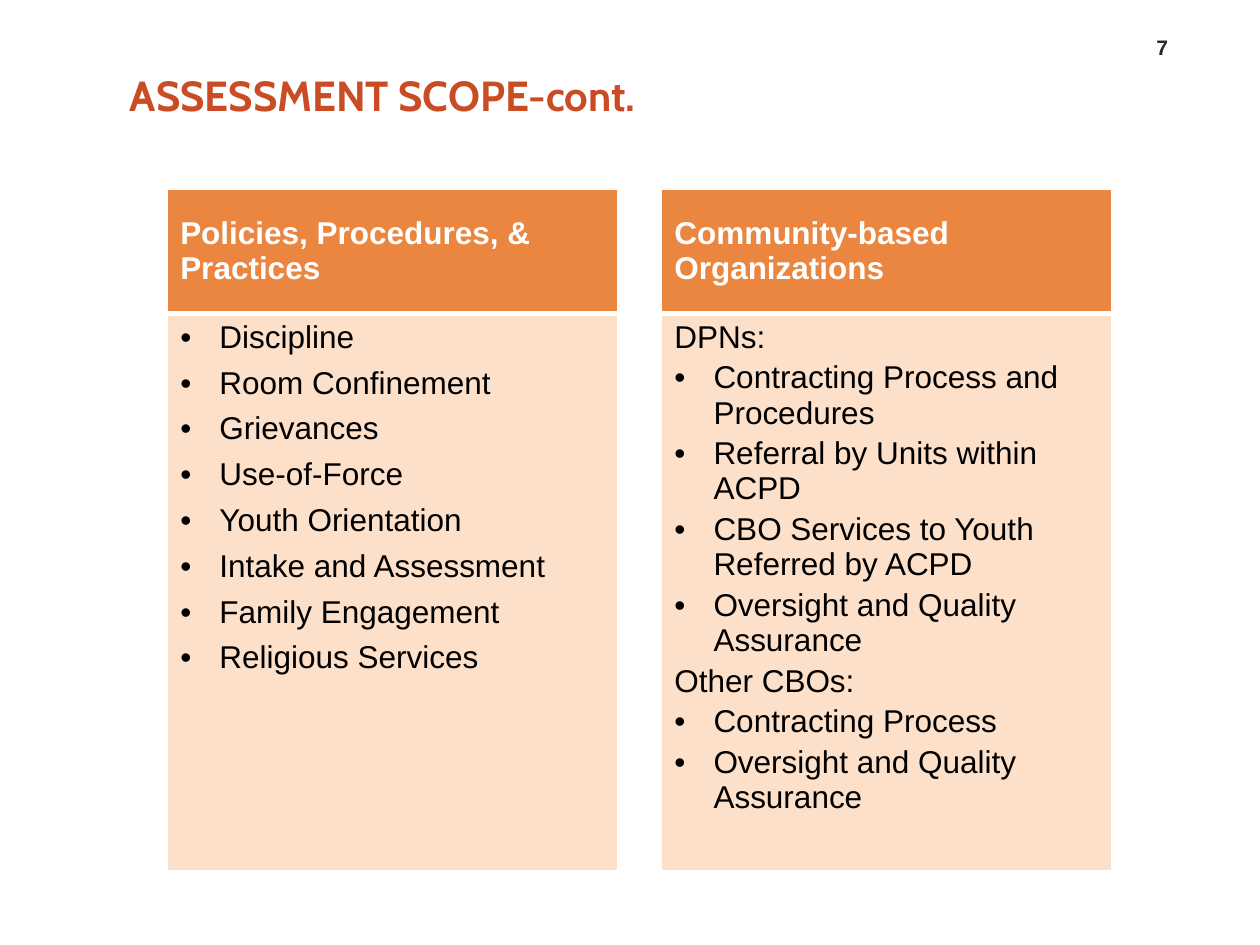
"""Build the assessment scope slide with its two-column table."""
from dataclasses import dataclass

import pptx
import pptx.dml.color
import pptx.enum.text
import pptx.oxml
import pptx.oxml.ns
import pptx.util
from lxml import etree
from pptx.util import Cm


@dataclass(frozen=True)
class Theme:
    title_font: str = "Cabin"
    body_font: str = "Arial"
    title_color: str = "C94C25"
    number_color: str = "262626"
    header_fill: str = "EA8640"
    body_fill: str = "FDE0CA"
    white: str = "FFFFFF"
    black: str = "000000"
    title_size: int = 24
    table_size: int = 18
    number_size: int = 12


def style(paragraph, name, size, color, bold):
    font = paragraph.font
    font.name = name
    font.size = pptx.util.Pt(size)
    font.bold = bold
    font.color.rgb = pptx.dml.color.RGBColor.from_string(color)


def paint_cell(cell, fill, borders):
    properties = cell._tc.get_or_add_tcPr()
    for side, width in borders.items():
        line = etree.SubElement(properties, pptx.oxml.ns.qn(f"a:ln{side}"), w=str(pptx.util.Pt(width)))
        solid = etree.SubElement(line, pptx.oxml.ns.qn("a:solidFill"))
        etree.SubElement(solid, pptx.oxml.ns.qn("a:srgbClr"), val=theme.white)
    cell.fill.solid()
    cell.fill.fore_color.rgb = pptx.dml.color.RGBColor.from_string(fill)


theme = Theme()
deck = pptx.Presentation()
deck.slide_width, deck.slide_height = Cm(25.4), Cm(19.05)
page = deck.slides.add_slide(deck.slide_layouts[5])

title = page.shapes.title
title.left, title.top, title.width, title.height = Cm(2.11), Cm(0.81), Cm(11.66), Cm(2.21)
box = title.text_frame
box.text = "ASSESSMENT SCOPE-cont."
box.margin_left = box.margin_right = 0
box.vertical_anchor = pptx.enum.text.MSO_ANCHOR.MIDDLE
box.auto_size = pptx.enum.text.MSO_AUTO_SIZE.NONE
para = box.paragraphs[0]
para.alignment = pptx.enum.text.PP_ALIGN.LEFT
para._p.get_or_add_pPr().set("marL", str(Cm(0.51)))
style(para, theme.title_font, theme.title_size, theme.title_color, True)

box = page.shapes.add_textbox(Cm(22.73), Cm(0.48), Cm(1.4), Cm(0.84)).text_frame
box.word_wrap = True
box.vertical_anchor = pptx.enum.text.MSO_ANCHOR.BOTTOM
para = box.paragraphs[0]
para.text = "7"
para.alignment = pptx.enum.text.PP_ALIGN.CENTER
style(para, theme.body_font, theme.number_size, theme.number_color, True)

topics = [
    (0, "Policies, Procedures, & Practices", 6, [
        "Discipline", "Room Confinement", "Grievances", "Use-of-Force",
        "Youth Orientation", "Intake and Assessment", "Family Engagement",
        "Religious Services",
    ]),
    (2, "Community-based Organizations", 3, [
        "DPNs:", "Contracting Process and Procedures",
        "Referral by Units within ACPD",
        "CBO Services to Youth Referred by ACPD",
        "Oversight and Quality Assurance", "Other CBOs:",
        "Contracting Process", "Oversight and Quality Assurance",
    ]),
]
table = page.shapes.add_table(2, 3, Cm(3.38), Cm(3.81), Cm(19.03), Cm(13.74)).table
for column, width in zip(table.columns, (9.07, 0.89, 9.07)):
    column.width = Cm(width)
for row, height in zip(table.rows, (2.51, 11.23)):
    row.height = Cm(height)

fills = (theme.header_fill, theme.body_fill)
edges = ({"L": 1, "R": 1, "T": 1, "B": 3}, {"L": 1, "R": 1, "T": 3, "B": 1})
for row, (fill, borders) in enumerate(zip(fills, edges)):
    for column in range(3):
        paint_cell(table.cell(row, column), theme.white if column == 1 else fill, borders)

for column, heading, gap, lines in topics:
    header = table.cell(0, column)
    header.text = heading
    header.vertical_anchor = pptx.enum.text.MSO_ANCHOR.MIDDLE
    style(header.text_frame.paragraphs[0], theme.body_font, theme.table_size, theme.white, True)
    body = table.cell(1, column)
    body.text = "\n".join(lines)
    for para in body.text_frame.paragraphs:
        if not para.text.endswith(":"):
            properties = para._p.get_or_add_pPr()
            properties.set("marL", str(Cm(0.79)))
            properties.set("indent", str(Cm(-0.79)))
            etree.SubElement(properties, pptx.oxml.ns.qn("a:buFont"), typeface=theme.body_font)
            etree.SubElement(properties, pptx.oxml.ns.qn("a:buChar"), char="•")
        para.space_after = pptx.util.Pt(gap)
        style(para, theme.body_font, theme.table_size, theme.black, False)

deck.save("out.pptx")
